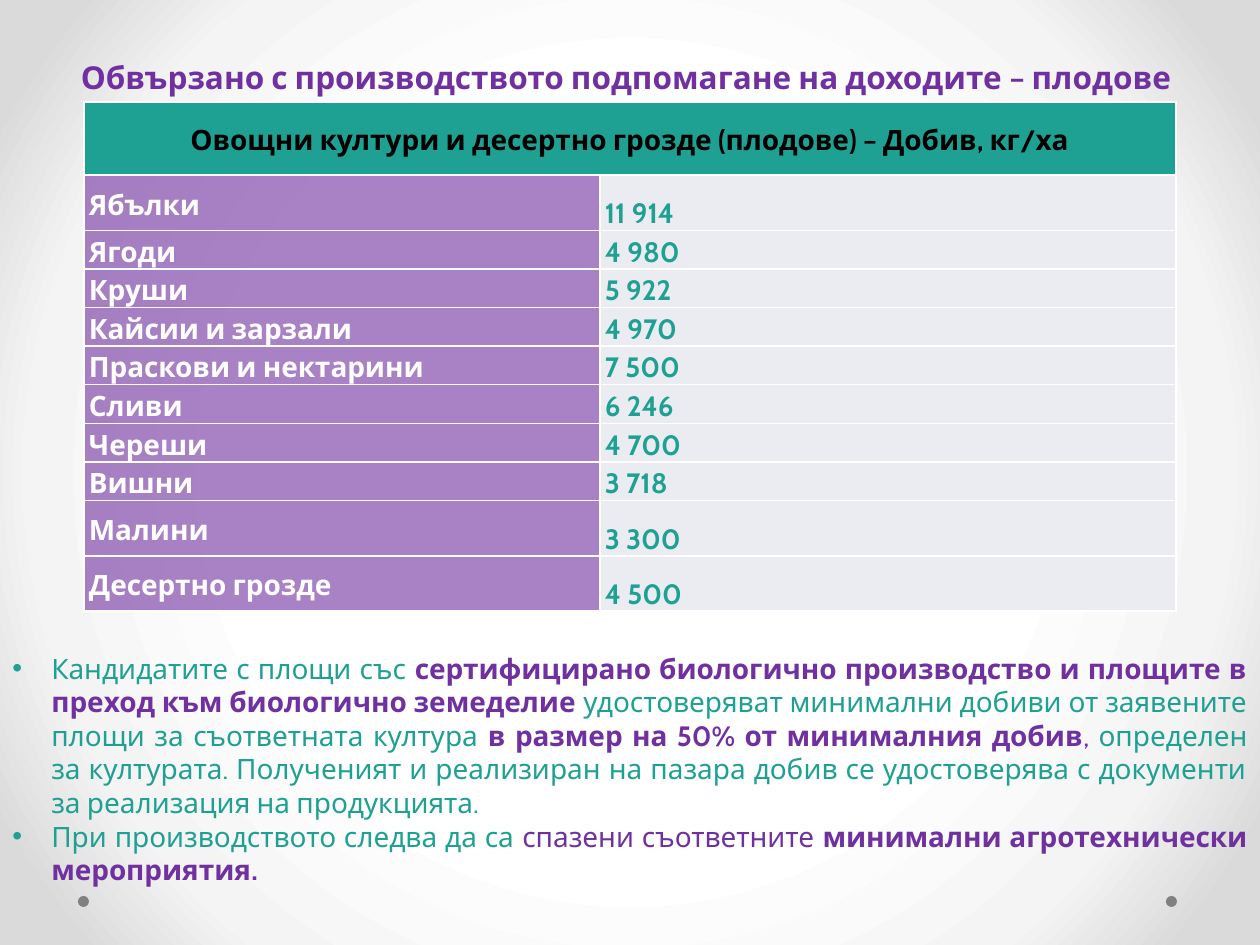
from pptx import Presentation
from pptx.dml.color import RGBColor
from pptx.enum.shapes import MSO_SHAPE as Shape
from pptx.enum.text import MSO_ANCHOR as Anchor, PP_ALIGN as Align
from pptx.oxml import parse_xml
from pptx.oxml.ns import nsdecls, qn
from pptx.util import Pt
from lxml.etree import SubElement

PX_PER_INCH = 126
WHITE = RGBColor(0xFF, 0xFF, 0xFF)
BLACK = RGBColor(0, 0, 0)
TEAL = RGBColor(0x1E, 0xA0, 0x92)
PURPLE = RGBColor(0x70, 0x30, 0xA0)
PALE = RGBColor(0xEA, 0xEC, 0xF2)
GREY = RGBColor(0x80, 0x80, 0x80)
GLOW = [(50, "FFFFFF"), (76, "F4F4F4"), (92, "DADADA")]

TITLE = "Обвързано с производството подпомагане на доходите – плодове "
HEADING = "Овощни култури и десертно грозде (плодове) – Добив, кг/ха"
YIELDS = [
    ("Ябълки", "11 914"), ("Ягоди", "4 980"), ("Круши", "5 922"),
    ("Кайсии и зарзали", "4 970"), ("Праскови и нектарини", "7 500"),
    ("Сливи", "6 246"), ("Череши", "4 700"), ("Вишни", "3 718"),
    ("Малини", "3 300"), ("Десертно грозде", "4 500"),
]
TALL_ROWS = {"Ябълки", "Малини", "Десертно грозде"}
JUSTIFIED_ROW = "Десертно грозде"
NOTES = [
    [("Кандидатите с площи със ", TEAL, False),
     ("сертифицирано биологично производство и площите в преход към "
      "биологично земеделие ", PURPLE, True),
     ("удостоверяват минимални добиви от заявените площи за съответната "
      "култура ", TEAL, False),
     ("в размер на 50% от минималния добив", PURPLE, True),
     (", ", PURPLE, False),
     ("определен за културата. Полученият и реализиран на пазара добив се "
      "удостоверява с документи за реализация на продукцията. ", TEAL, False)],
    [("При производството следва да са ", TEAL, False),
     ("спазени съответните ", PURPLE, False),
     ("минимални агротехнически мероприятия. ", PURPLE, True)],
]


def px(length):
    return round(length * 914400 / PX_PER_INCH)


def set_all(target, values):
    for name, value in values.items():
        setattr(target, name, value)


class SlideBuilder:
    font = "Cabin"
    cell_format = {"vertical_anchor": Anchor.MIDDLE, "margin_left": px(5),
                   "margin_right": px(5), "margin_top": px(5), "margin_bottom": 0}

    def __init__(self, slide):
        self.slide = slide

    def background(self, stops):
        marks = "".join(f'<a:gs pos="{pos * 1000}"><a:srgbClr val="{color}"/></a:gs>'
                        for pos, color in stops)
        self.slide.element.cSld.insert(0, parse_xml(
            f'<p:bg {nsdecls("p", "a")}><p:bgPr><a:gradFill rotWithShape="1">'
            f'<a:gsLst>{marks}</a:gsLst><a:path path="circle">'
            '<a:fillToRect l="50000" t="50000" r="50000" b="50000"/></a:path>'
            '</a:gradFill><a:effectLst/></p:bgPr></p:bg>'))

    def dot(self, left, top, size):
        dot = self.slide.shapes.add_shape(
            Shape.OVAL, px(left), px(top), px(size), px(size))
        dot.shadow.inherit = False
        dot.fill.solid()
        dot.fill.fore_color.rgb = GREY
        dot.line.fill.background()

    def add_runs(self, paragraph, runs, size=16, **paragraph_format):
        set_all(paragraph, paragraph_format)
        for text, color, bold in runs:
            run = paragraph.add_run()
            run.text = text
            set_all(run.font, {"name": self.font, "size": Pt(size), "bold": bold})
            run.font.color.rgb = color

    def text_box(self, left, top, width, height):
        box = self.slide.shapes.add_textbox(px(left), px(top), px(width), px(height))
        box.text_frame.word_wrap = True
        return box.text_frame

    def title(self, text, *place):
        self.add_runs(self.text_box(*place).paragraphs[0], [(text, PURPLE, True)],
                      size=18, alignment=Align.CENTER, space_before=Pt(7.5))

    def bullets(self, items, indent, *place):
        frame = self.text_box(*place)
        for index, runs in enumerate(items):
            paragraph = frame.add_paragraph() if index else frame.paragraphs[0]
            self.add_runs(paragraph, runs, alignment=Align.JUSTIFY)
            props = paragraph._p.get_or_add_pPr()
            props.set("marL", str(px(indent)))
            props.set("indent", str(-px(indent)))
            SubElement(props, qn("a:buFont"), typeface="Arial")
            SubElement(props, qn("a:buChar"), char="•")

    def cell(self, cell, text, color, fill, alpha=None, **paragraph_format):
        set_all(cell, self.cell_format)
        cell.fill.solid()
        cell.fill.fore_color.rgb = fill
        props = cell._tc.get_or_add_tcPr()
        if alpha:
            SubElement(props.find(".//" + qn("a:srgbClr")), qn("a:alpha"),
                       val=str(alpha * 1000))
        for index, side in enumerate(("lnL", "lnR", "lnT", "lnB")):
            props.insert(index, parse_xml(
                f'<a:{side} {nsdecls("a")} w="{Pt(1)}"><a:solidFill>'
                f'<a:srgbClr val="{WHITE}"/></a:solidFill></a:{side}>'))
        if text:
            self.add_runs(cell.text_frame.paragraphs[0], [(text, color, True)],
                          **paragraph_format)

    def yield_table(self, left, top, column_widths, heading_height,
                    row_height, tall_height):
        heights = [heading_height] + [
            tall_height if crop in TALL_ROWS else row_height for crop, _ in YIELDS]
        table = self.slide.shapes.add_table(
            len(heights), len(column_widths), px(left), px(top),
            px(sum(column_widths)), px(sum(heights))).table
        for column, width in zip(table.columns, column_widths):
            column.width = px(width)
        for row, height in zip(table.rows, heights):
            row.height = px(height)

        self.cell(table.cell(0, 0), HEADING, BLACK, TEAL, alignment=Align.CENTER)
        self.cell(table.cell(0, 1), "", BLACK, TEAL)
        table.cell(0, 0).merge(table.cell(0, 1))
        for row, (crop, amount) in enumerate(YIELDS, start=1):
            self.cell(table.cell(row, 0), crop, WHITE, PURPLE, alpha=60,
                      alignment=Align.JUSTIFY if crop == JUSTIFIED_ROW else Align.LEFT)
            self.cell(table.cell(row, 1), amount, TEAL, PALE,
                      line_spacing=1.5 if crop in TALL_ROWS else 1.0)


def main():
    presentation = Presentation()
    set_all(presentation, {"slide_width": px(1260), "slide_height": px(945)})
    builder = SlideBuilder(presentation.slides.add_slide(presentation.slide_layouts[6]))
    builder.background(GLOW)
    for left in (1166, 78):
        builder.dot(left, 896, 11)
    builder.title(TITLE, 58, 52, 1144, 50)
    builder.yield_table(84, 102, (516, 576), heading_height=73,
                        row_height=38, tall_height=55)
    builder.bullets(NOTES, 39, 0, 645, 1260, 251)
    presentation.save("out.pptx")


if __name__ == "__main__":
    main()
